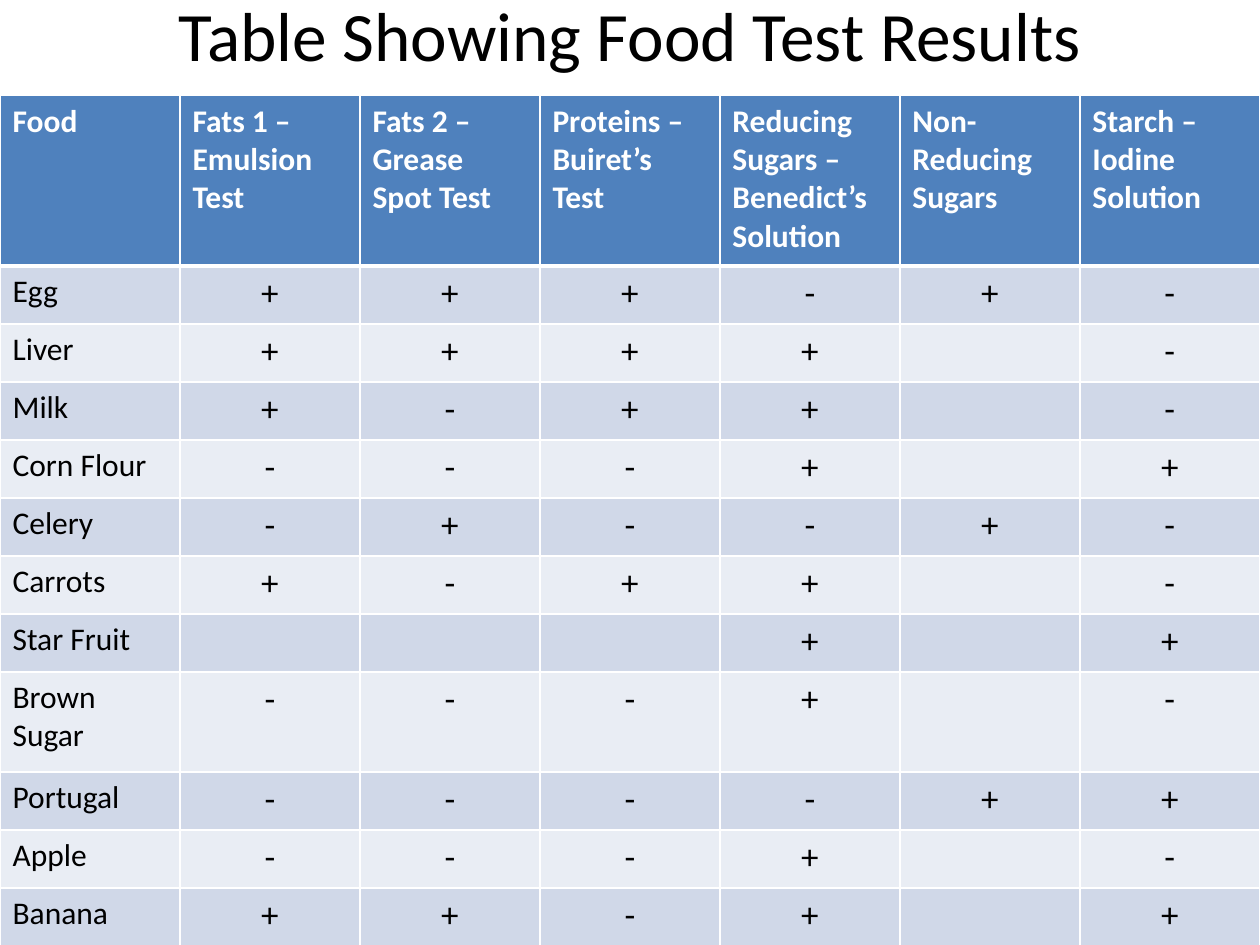
from lxml.etree import SubElement
from pptx import Presentation
from pptx.dml.color import RGBColor
from pptx.enum.text import MSO_ANCHOR, MSO_AUTO_SIZE, PP_ALIGN
from pptx.oxml.ns import qn
from pptx.util import Cm, Pt

FONT = "Calibri"
WHITE, BLACK, BLUE = "FFFFFF", "000000", "4F81BD"
BANDS = ("D0D8E8", "E9EDF4")
HEADS = ("Food", "Fats 1 – Emulsion Test", "Fats 2 – Grease Spot Test",
         "Proteins – Buiret’s Test", "Reducing Sugars – Benedict’s Solution",
         "Non-Reducing Sugars", "Starch – Iodine Solution")
FOODS = (("Egg", "+++-+-"), ("Liver", "++++ -"), ("Milk", "+-++ -"),
         ("Corn Flour", "---+ +"), ("Celery", "-+--+-"),
         ("Carrots", "+-++ -"), ("Star Fruit", "   + +"),
         ("Brown Sugar", "---+ -"), ("Portugal", "----++"),
         ("Apple", "---+ -"), ("Banana", "++-+ +"))


def paint(color, tone):
    """Set a colour format from a hex string."""
    color.rgb = RGBColor.from_string(tone)


def write(frame, text, size, tone=BLACK, bold=False, align=PP_ALIGN.LEFT):
    """Write one formatted run into a text frame."""
    para = frame.paragraphs[0]
    para.alignment = align
    run = para.add_run()
    run.text = text
    run.font.name, run.font.size, run.font.bold = FONT, Pt(size), bold
    paint(run.font.color, tone)


def edge(cell, base):
    """Draw white borders round a cell, with the given bottom width."""
    props = cell._tc.get_or_add_tcPr()
    for side, width in (("L", 1), ("R", 1), ("T", 1), ("B", base)):
        line = SubElement(props, qn(f"a:ln{side}"), w=str(Pt(width)))
        fill = SubElement(line, qn("a:solidFill"))
        SubElement(fill, qn("a:srgbClr"), val=WHITE)


def shade(cell, tone, base=1):
    """Give a cell its borders and fill."""
    edge(cell, base)
    cell.fill.solid()
    paint(cell.fill.fore_color, tone)


def add_title(slide, text):
    """Place and fill the title."""
    title = slide.shapes.title
    title.left, title.top = Cm(1.27), Cm(0)
    title.width, title.height = Cm(22.86), Cm(1.35)
    frame = title.text_frame
    frame.auto_size = MSO_AUTO_SIZE.NONE
    frame.vertical_anchor = MSO_ANCHOR.MIDDLE
    write(frame, text, 39.6, align=PP_ALIGN.CENTER)


def add_grid(slide):
    """Add the table of test results."""
    grid = slide.shapes.add_table(len(FOODS) + 1, len(HEADS), Cm(0), Cm(1.93),
                                  Cm(25.4), Cm(17.12)).table
    for col in grid.columns:
        col.width = int(Cm(25.4) / len(HEADS))
    grid.rows[0].height = Cm(3.43)
    for x, head in enumerate(HEADS):
        cell = grid.cell(0, x)
        shade(cell, BLUE, 3)
        write(cell.text_frame, head, 18, WHITE, True)
    for y, (food, marks) in enumerate(FOODS, 1):
        grid.rows[y].height = Cm(2.01 if food == "Brown Sugar" else 1.17)
        for x, text in enumerate((food, *marks)):
            cell = grid.cell(y, x)
            shade(cell, BANDS[(y - 1) % 2])
            if x == 0:
                write(cell.text_frame, text, 18)
            elif text != " ":
                write(cell.text_frame, text, 20, align=PP_ALIGN.CENTER)


def main():
    """Build and save the slide."""
    deck = Presentation()
    deck.slide_width, deck.slide_height = Cm(25.4), Cm(19.05)
    slide = deck.slides.add_slide(deck.slide_layouts[5])
    add_title(slide, "Table Showing Food Test Results")
    add_grid(slide)
    deck.save("out.pptx")


if __name__ == "__main__":
    main()
